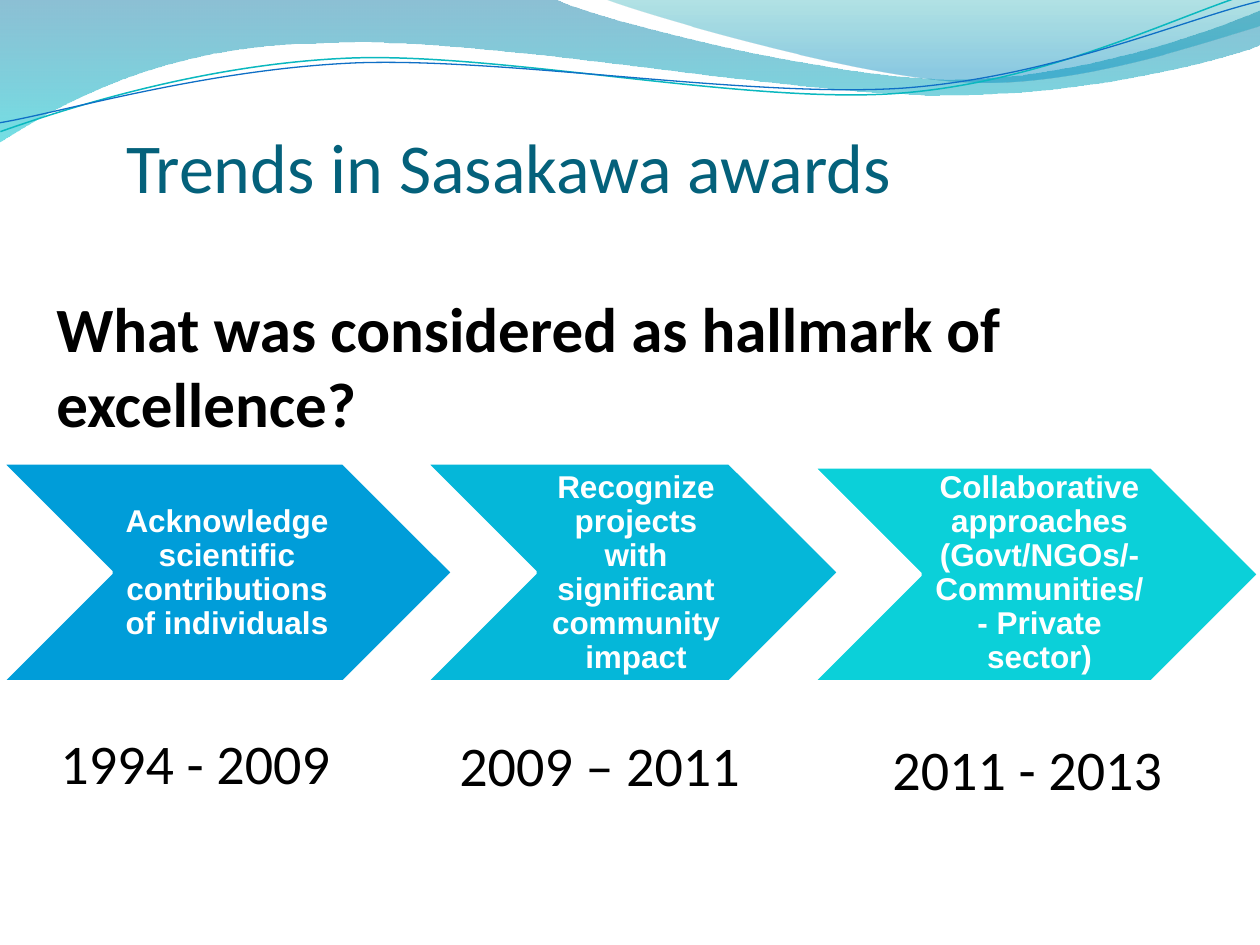
from itertools import chain
from lxml.etree import SubElement
from pptx import Presentation
from pptx.dml.color import RGBColor
from pptx.enum.shapes import MSO_SHAPE
from pptx.enum.text import MSO_ANCHOR, MSO_AUTO_SIZE, PP_ALIGN
from pptx.oxml.ns import qn
from pptx.util import Emu, Pt

EMU_PER_PX = 914400 / 126
LINE_ROTATION = 357.3

UPPER_WAVE = [
    [(0, -1)], [(554, -1)],
    [(600, 21), (837, 79), (955, 79)], [(1075, 79), (1207, 33), (1260, 11)],
    [(1261, 45)],
    [(1238, 55), (1096, 96), (940, 95)], [(784, 95), (481, 35), (324, 43)],
    [(163, 44), (58, 105), (-1, 142)], [(0, -1)],
]
RIGHT_WAVE = [
    [(604, -1)], [(641, 14), (859, 78), (969, 82)],
    [(1079, 87), (1211, 40), (1260, 26)], [(1260, 0)], [(604, -1)],
]
TEAL_LINE = [
    [(-2, 102)], [(58, 84), (200, 44), (350, 45)],
    [(499, 46), (745, 110), (896, 106)], [(1049, 102), (1184, 39), (1260, 21)],
]
BLUE_LINE = [
    [(-2, 93)], [(58, 86), (208, 49), (358, 50)],
    [(509, 52), (750, 104), (902, 101)], [(1052, 97), (1187, 45), (1262, 31)],
]
STAGES = [
    ((2, 463, 451, 219), (108, 464, 232, 219), "009DD9",
     "Acknowledge scientific contributions of individuals"),
    ((426, 463, 413, 219), (536, 464, 194, 219), "05B7D9",
     "Recognize projects with significant community impact"),
    ((813, 467, 446, 215), (921, 466, 231, 215), "0BD0D9",
     "Collaborative approaches (Govt/NGOs/-Communities/- Private sector)"),
]
PERIODS = [
    ((48, 722, 299, 81), "1994 - 2009"),
    ((447, 724, 309, 81), "2009 – 2011"),
    ((880, 728, 299, 81), "2011 - 2013"),
]


def px(length):
    """Turn pixels into EMU."""
    return Emu(round(length * EMU_PER_PX))


def color(hex_string):
    """Turn a hex string into a colour."""
    return RGBColor.from_string(hex_string)


def bend(shape, segments):
    """Turn each run of three control points into a cubic curve."""
    lines = iter(list(shape.element.iter(qn("a:lnTo"))))
    for segment in segments:
        members = [next(lines) for _ in segment]
        if len(members) == 3:
            outline = members[0].getparent()
            curve = SubElement(outline, qn("a:cubicBezTo"))
            members[0].addprevious(curve)
            for member in members:
                curve.append(member[0])
                outline.remove(member)


def add_path(shapes, segments, close):
    """Draw a freeform of straight and curved segments without shadow."""
    start, *points = [(px(x), px(y)) for x, y in chain.from_iterable(segments)]
    builder = shapes.build_freeform(*start, scale=1.0)
    builder.add_line_segments(points, close=close)
    shape = builder.convert_to_shape()
    shape.shadow.inherit = False
    bend(shape, segments[1:])
    return shape


def add_wave(shapes, segments, stops):
    """Draw a wave with a translucent top-to-bottom gradient."""
    shape = add_path(shapes, segments, True)
    shape.line.fill.background()
    shape.fill.gradient()
    shape.fill.gradient_angle = 270
    for stop, (position, hex_string, _) in zip(shape.fill.gradient_stops, stops):
        stop.position = position
        stop.color.rgb = color(hex_string)
    elements = shape.element.spPr.iter(qn("a:srgbClr"))
    for element, (_, _, opacity) in zip(elements, stops):
        SubElement(element, qn("a:alpha")).set("val", str(opacity * 1000))


def add_wave_line(shapes, segments, hex_string, width):
    """Draw a thin, slightly turned curved line."""
    shape = add_path(shapes, segments, False)
    shape.rotation = LINE_ROTATION
    shape.fill.background()
    shape.line.color.rgb = color(hex_string)
    shape.line.width = Pt(width)


def format_text(shape, text, size, hex_string, font_name="Calibri", bold=False):
    """Fill a shape with one paragraph of formatted text."""
    shape.text_frame.text = text
    font = shape.text_frame.paragraphs[0].runs[0].font
    font.name, font.size, font.bold = font_name, Pt(size), bold
    font.color.rgb = color(hex_string)


def set_margins(text_frame, left, top, right, bottom):
    """Set the insets of a text frame in pixels."""
    text_frame.margin_left, text_frame.margin_top = px(left), px(top)
    text_frame.margin_right, text_frame.margin_bottom = px(right), px(bottom)


def add_title(slide, text):
    """Place and format the title placeholder in front of the waves."""
    title = slide.shapes.title
    title.element.getparent().append(title.element)
    title.left, title.top, title.width, title.height = map(px, (126, 74, 993, 134))
    format_text(title, text, 40, "04617B")
    frame = title.text_frame
    frame.auto_size = MSO_AUTO_SIZE.NONE
    frame.vertical_anchor = MSO_ANCHOR.BOTTOM
    set_margins(frame, 0, 6, 0, 0)
    frame.paragraphs[0].alignment = PP_ALIGN.LEFT


def add_text(shapes, box, text, size, hex_string="000000", wrap=True, **style):
    """Add a text box and return its text frame."""
    shape = shapes.add_textbox(*map(px, box))
    shape.text_frame.word_wrap = wrap
    format_text(shape, text, size, hex_string, **style)
    return shape.text_frame


def add_stage(shapes, chevron_box, text_box, hex_string, text):
    """Draw a chevron with its centred label."""
    chevron = shapes.add_shape(MSO_SHAPE.CHEVRON, *map(px, chevron_box))
    chevron.shadow.inherit = False
    chevron.fill.solid()
    chevron.fill.fore_color.rgb = color(hex_string)
    chevron.line.color.rgb = color("FFFFFF")
    chevron.line.width = Pt(2)
    frame = add_text(shapes, text_box, text, 18, "FFFFFF", font_name="Arial", bold=True)
    frame.vertical_anchor = MSO_ANCHOR.MIDDLE
    set_margins(frame, 10, 4, 4, 4)
    paragraph = frame.paragraphs[0]
    paragraph.alignment = PP_ALIGN.CENTER
    paragraph.line_spacing = 0.9


def main():
    """Build the slide and save it."""
    presentation = Presentation()
    presentation.slide_width, presentation.slide_height = px(1260), px(945)
    slide = presentation.slides.add_slide(presentation.slide_layouts[5])
    shapes = slide.shapes
    add_wave(shapes, UPPER_WAVE, [(0, "0074A1", 45), (1, "00C6CF", 55)])
    add_wave(shapes, RIGHT_WAVE, [(0, "00A1A9", 30), (0.8, "008BBF", 45)])
    wave_lines = shapes.add_group_shape().shapes
    add_wave_line(wave_lines, TEAL_LINE, "0AB8BF", 0.85)
    add_wave_line(wave_lines, BLUE_LINE, "0F6FC6", 0.75)
    add_title(slide, "Trends in Sasakawa awards")
    process = shapes.add_group_shape().shapes
    for stage in STAGES:
        add_stage(process, *stage)
    add_text(shapes, (44, 283, 985, 165),
             "What was considered as hallmark of excellence?", 36, bold=True)
    for box, period in PERIODS:
        add_text(shapes, box, period, 32, wrap=False)
    presentation.save("out.pptx")


if __name__ == "__main__":
    main()
